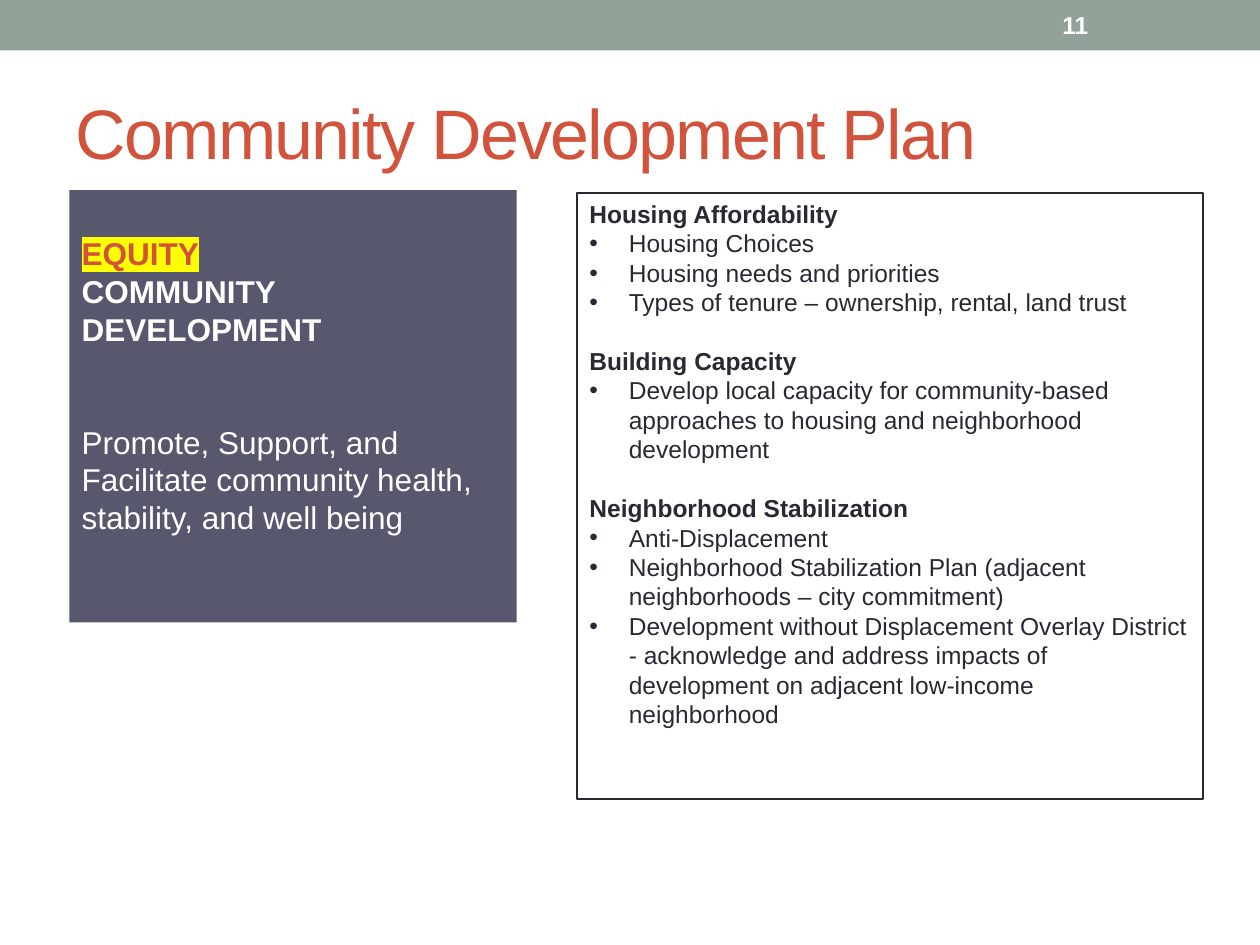
from lxml import etree
from pptx import Presentation
from pptx.dml.color import RGBColor
from pptx.enum.shapes import MSO_SHAPE
from pptx.enum.text import MSO_ANCHOR, PP_ALIGN
from pptx.oxml.ns import qn
from pptx.util import Pt

RECTANGLE = MSO_SHAPE.RECTANGLE
TOP, MIDDLE = MSO_ANCHOR.TOP, MSO_ANCHOR.MIDDLE
LEFT = PP_ALIGN.LEFT
TITLE_ONLY = 5
SAGE, RED, SLATE, INK = "93A299", "D2533C", "57576E", "292934"
WHITE, YELLOW = "FFFFFF", "FFFF00"

TOPICS = [
    ("Housing Affordability", [
        "Housing Choices",
        "Housing needs and priorities",
        "Types of tenure – ownership, rental, land trust",
    ]),
    ("Building Capacity", [
        "Develop local capacity for community-based approaches to housing "
        "and neighborhood development",
    ]),
    ("Neighborhood Stabilization", [
        "Anti-Displacement",
        "Neighborhood Stabilization Plan (adjacent neighborhoods – city commitment)",
        "Development without Displacement Overlay District - acknowledge and "
        "address impacts of development on adjacent low-income neighborhood",
    ]),
]


def color(value):
    return RGBColor.from_string(value)


def set_attributes(target, values):
    for name, value in values.items():
        setattr(target, name, value)


class SlideBuilder:
    font = "Arial"
    bullet_indent = 22.5

    def __init__(self, slide):
        self.slide = slide

    def frame(self, shape, anchor=TOP, top_inset=3.6):
        set_attributes(shape.text_frame, {
            "word_wrap": True, "vertical_anchor": anchor,
            "margin_left": Pt(7.2), "margin_right": Pt(7.2),
            "margin_top": Pt(top_inset), "margin_bottom": Pt(3.6)})
        return shape.text_frame

    def rectangle(self, left, top, width, height, fill=None, line=None):
        shape = self.slide.shapes.add_shape(
            RECTANGLE, Pt(left), Pt(top), Pt(width), Pt(height))
        shape.shadow.inherit = False
        if fill:
            shape.fill.solid()
            shape.fill.fore_color.rgb = color(fill)
        else:
            shape.fill.background()
        if line:
            shape.line.color.rgb = color(line)
            shape.line.width = Pt(1)
        else:
            shape.line.fill.background()
        return shape

    def paragraph(self, frame, text, size, ink, bold=False, before=0):
        """Write into the empty first paragraph, or append a new one."""
        first = frame.paragraphs[0]
        paragraph = frame.add_paragraph() if first.runs else first
        set_attributes(paragraph, {
            "alignment": LEFT, "space_before": Pt(before), "space_after": Pt(0)})
        run = paragraph.add_run()
        run.text = text
        set_attributes(run.font, {"name": self.font, "size": Pt(size), "bold": bold})
        run.font.color.rgb = color(ink)
        return paragraph

    def bullet(self, frame, text, size, ink):
        paragraph = self.paragraph(frame, text, size, ink)
        properties = paragraph._p.get_or_add_pPr()
        properties.set("marL", str(Pt(self.bullet_indent)))
        properties.set("indent", str(-Pt(self.bullet_indent)))
        etree.SubElement(properties, qn("a:buFont")).set("typeface", self.font)
        etree.SubElement(properties, qn("a:buChar")).set("char", "•")

    def highlight(self, paragraph, value):
        fill = paragraph.runs[0]._r.rPr.find(qn("a:solidFill"))
        mark = etree.Element(qn("a:highlight"))
        etree.SubElement(mark, qn("a:srgbClr")).set("val", value)
        fill.addnext(mark)

    def title(self, text, left, top, width, height):
        shape = self.slide.shapes.title
        set_attributes(shape, {"left": Pt(left), "top": Pt(top),
                               "width": Pt(width), "height": Pt(height)})
        paragraph = self.paragraph(self.frame(shape, MIDDLE), text, 40, RED)
        paragraph.runs[0]._r.rPr.set("spc", "-100")

    def page_number(self, text, left, top, width, height):
        shape = self.slide.shapes.add_textbox(
            Pt(left), Pt(top), Pt(width), Pt(height))
        self.paragraph(self.frame(shape, MIDDLE), text, 14, WHITE, bold=True)

    def topics_panel(self, topics, left, top, width, height):
        panel = self.rectangle(left, top, width, height, line=INK)
        frame = self.frame(panel)
        for index, (heading, items) in enumerate(topics):
            self.paragraph(frame, heading, 14, INK, bold=True,
                           before=16.8 if index else 0)
            for item in items:
                self.bullet(frame, item, 14, INK)

    def goal_panel(self, left, top, width, height):
        panel = self.rectangle(left, top, width, height, fill=SLATE)
        frame = self.frame(panel, top_inset=25)
        equity = self.paragraph(frame, "EQUITY", 18, RED, bold=True)
        self.highlight(equity, YELLOW)
        self.paragraph(frame, "COMMUNITY DEVELOPMENT", 18, WHITE, bold=True)
        self.paragraph(
            frame, "Promote, Support, and Facilitate community health, "
            "stability, and well being", 18, WHITE, before=43)


def main():
    presentation = Presentation()
    presentation.slide_width, presentation.slide_height = Pt(720), Pt(540)
    layout = presentation.slide_layouts[TITLE_ONLY]
    builder = SlideBuilder(presentation.slides.add_slide(layout))
    builder.rectangle(0, 0, 720, 28.8, fill=SAGE)
    builder.title("Community Development Plan", 36, 36, 648, 77.76)
    builder.page_number("11", 600, 1.44, 84, 25.92)
    builder.topics_panel(TOPICS, 329.76, 110.16, 357.84, 346.32)
    builder.goal_panel(39.6, 108.72, 255.6, 246.96)
    presentation.save("out.pptx")


if __name__ == "__main__":
    main()
